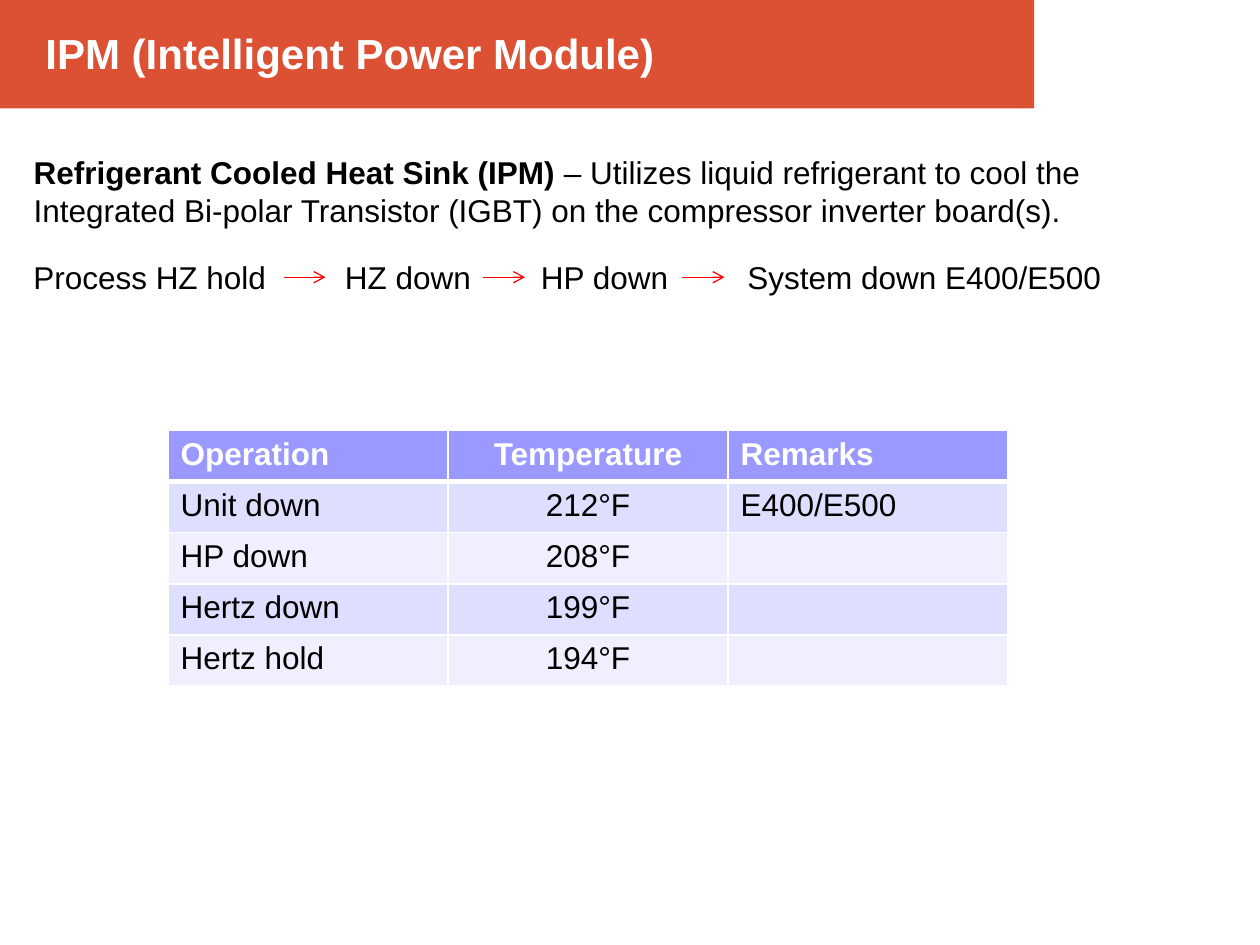
from lxml.etree import SubElement
from pptx import Presentation
from pptx.dml.color import RGBColor
from pptx.enum.shapes import MSO_CONNECTOR as Connector, MSO_SHAPE as Shape
from pptx.enum.text import MSO_ANCHOR as Anchor, MSO_AUTO_SIZE as AutoSize, PP_ALIGN as Align
from pptx.oxml.ns import qn
from pptx.util import Pt

ROWS = [
    ("Operation", "Temperature", "Remarks"),
    ("Unit down", "212°F", "E400/E500"),
    ("HP down", "208°F", ""),
    ("Hertz down", "199°F", ""),
    ("Hertz hold", "194°F", ""),
]
STEPS = [
    ("Process HZ hold", 12, 150),
    ("HZ down", 190, 90),
    ("HP down", 302, 90),
    ("System down E400/E500", 420, 230),
]
ARROW_STARTS = [162, 276, 390]


def color(value):
    return RGBColor.from_string(value)


def write(para, text, size=18, bold=False, fill="000000", align=Align.LEFT):
    para.alignment = align
    span = para.add_run()
    span.text = text
    span.font.name = "Arial"
    span.font.size = Pt(size)
    span.font.bold = bold
    span.font.color.rgb = color(fill)


def place(box, left, top, width, height):
    box.left, box.top, box.width, box.height = Pt(left), Pt(top), Pt(width), Pt(height)
    frame = box.text_frame
    frame.word_wrap = True
    frame.auto_size = AutoSize.NONE
    frame.vertical_anchor = Anchor.TOP
    return frame


def remove_bullet(para):
    para.space_before = Pt(0)
    props = para._p.get_or_add_pPr()
    props.set("marL", "0")
    props.set("indent", "0")
    SubElement(props, qn("a:buNone"))


def add_band(page):
    band = page.shapes.add_shape(Shape.RECTANGLE, 0, 0, Pt(591), Pt(62))
    band.shadow.inherit = False
    band.fill.solid()
    band.fill.fore_color.rgb = color("DC5034")
    band.line.fill.background()
    page.shapes._spTree.insert(2, band._element)


def add_title(page):
    frame = place(page.shapes.title, 12, 12, 564, 36)
    frame.margin_left = Pt(14)
    write(frame.paragraphs[0], "IPM (Intelligent Power Module)", size=24, bold=True, fill="FFFFFF")


def add_body(page):
    frame = place(page.placeholders[1], 12, 84, 690, 54)
    para = frame.paragraphs[0]
    remove_bullet(para)
    write(para, "Refrigerant Cooled Heat Sink (IPM)", bold=True)
    write(para, " – Utilizes liquid refrigerant to cool the Integrated Bi-polar "
                "Transistor (IGBT) on the compressor inverter board(s).")


def add_step(page, text, left, width):
    box = page.shapes.add_textbox(0, 0, 0, 0)
    frame = place(box, left, 144, width, 29)
    write(frame.paragraphs[0], text)


def add_arrow(page, left, top=158.4, length=24):
    arrow = page.shapes.add_connector(
        Connector.STRAIGHT, Pt(left), Pt(top), Pt(left + length), Pt(top))
    arrow.line.color.rgb = color("FF0000")
    arrow.line.width = Pt(0.75)
    SubElement(arrow.line._get_or_add_ln(), qn("a:tailEnd"), type="arrow")
    SubElement(arrow._element.spPr, qn("a:effectLst"))
    arrow._element.remove(arrow._element.find(qn("p:style")))


def set_borders(cell, bottom):
    props = cell._tc.get_or_add_tcPr()
    widths = {"a:lnL": 1, "a:lnR": 1, "a:lnT": 1, "a:lnB": bottom}
    for index, (tag, width) in enumerate(widths.items()):
        border = SubElement(props, qn(tag), w=str(Pt(width)))
        props.insert(index, border)
        fill = SubElement(border, qn("a:solidFill"))
        SubElement(fill, qn("a:srgbClr"), val="FFFFFF")


def add_temperature_table(page):
    table = page.shapes.add_table(
        len(ROWS), len(ROWS[0]), Pt(96), Pt(246), Pt(480), Pt(146)).table
    for row_index, texts in enumerate(ROWS):
        header = row_index == 0
        band = "9999FF" if header else ("EFEFFF", "DEDEFF")[row_index % 2]
        table.rows[row_index].height = Pt(29.2)
        for column, text in enumerate(texts):
            cell = table.cell(row_index, column)
            cell.fill.solid()
            cell.fill.fore_color.rgb = color(band)
            set_borders(cell, bottom=3 if header else 1)
            if text:
                write(cell.text_frame.paragraphs[0], text, bold=header,
                      fill="FFFFFF" if header else "000000",
                      align=Align.CENTER if column == 1 else Align.LEFT)


def main():
    deck = Presentation()
    deck.slide_width, deck.slide_height = Pt(720), Pt(540)
    page = deck.slides.add_slide(deck.slide_layouts[1])
    add_band(page)
    add_title(page)
    add_body(page)
    for text, left, width in STEPS:
        add_step(page, text, left, width)
    for left in ARROW_STARTS:
        add_arrow(page, left)
    add_temperature_table(page)
    deck.save("out.pptx")


if __name__ == "__main__":
    main()
